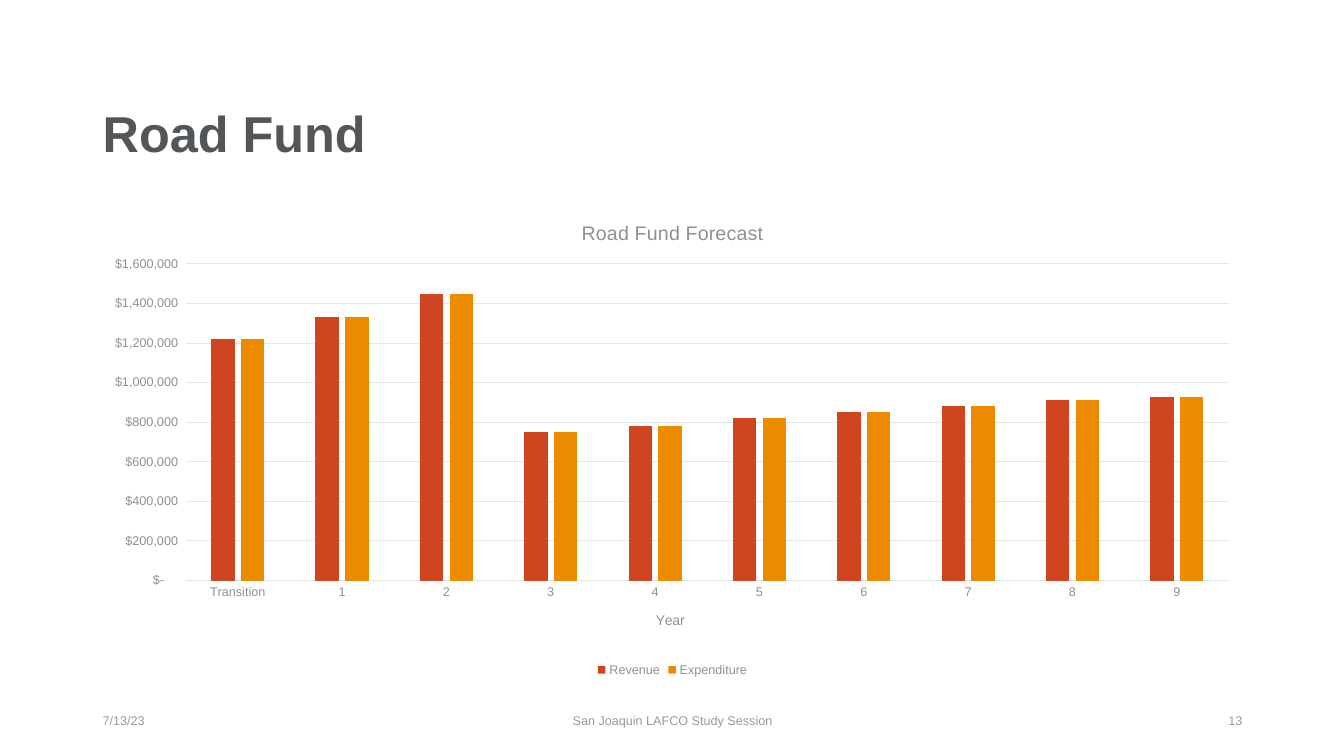
from lxml.etree import SubElement
from pptx import Presentation
from pptx.chart.data import CategoryChartData
from pptx.dml.color import RGBColor
from pptx.enum.chart import XL_CHART_TYPE, XL_LEGEND_POSITION, XL_TICK_MARK
from pptx.enum.text import MSO_ANCHOR, PP_ALIGN
from pptx.oxml.ns import qn
from pptx.util import Inches, Pt

DARK = RGBColor(0x53, 0x56, 0x59)
GRAY = RGBColor(0x8D, 0x91, 0x95)
FOOTER = RGBColor(0x99, 0x9A, 0x9B)
GRID = RGBColor(0xE5, 0xE6, 0xE7)
RED = RGBColor(0xCF, 0x45, 0x20)
ORANGE = RGBColor(0xED, 0x8B, 0x00)
DOLLARS = '_("$"* #,##0_);_("$"* \\(#,##0\\);_("$"* "-"??_);_(@_)'
YEARS = ["Transition"] + [str(year) for year in range(1, 10)]
BALANCED = [thousands * 1000 for thousands in
            (1220, 1330, 1450, 750, 780, 820, 850, 880, 910, 930)]


class SlideBuilder:
    """Holds the text style and the current slide."""

    def __init__(self, slide, font="Arial"):
        self.slide = slide
        self.font = font

    def style(self, font, size, color, bold=False):
        font.name = self.font
        font.size = Pt(size)
        font.bold = bold
        font.color.rgb = color

    def text(self, text, left, top, width, height, size, color,
             align=PP_ALIGN.LEFT, bold=False, spacing=1.0):
        tf = self.slide.shapes.add_textbox(
            Inches(left), Inches(top), Inches(width), Inches(height)).text_frame
        tf.word_wrap = True
        tf.vertical_anchor = MSO_ANCHOR.MIDDLE
        p = tf.paragraphs[0]
        p.text = text
        p.alignment = align
        p.line_spacing = spacing
        self.style(p.runs[0].font, size, color, bold)

    def heading(self, owner, text, size):
        p = owner.text_frame.paragraphs[0]
        p.text = text
        self.style(p.runs[0].font, size, GRAY)

    def axis(self, axis):
        axis.major_tick_mark = axis.minor_tick_mark = XL_TICK_MARK.NONE
        self.style(axis.tick_labels.font, 9, GRAY)

    def line(self, line):
        line.color.rgb = GRID
        line.width = Pt(0.75)

    def plot_area(self, chart, x, y, w, h):
        area = chart.plots[0]._element.getparent()
        for old in area.findall(qn("c:layout")):
            area.remove(old)
        layout = SubElement(area, qn("c:layout"))
        area.insert(0, layout)
        manual = SubElement(layout, qn("c:manualLayout"))
        settings = {"layoutTarget": "inner", "xMode": "edge", "yMode": "edge",
                    "x": x, "y": y, "w": w, "h": h}
        for name, value in settings.items():
            SubElement(manual, qn(f"c:{name}")).set("val", str(value))

    def columns(self, title, axis_title, categories, series, left, top, width, height):
        data = CategoryChartData(number_format=DOLLARS)
        data.categories = categories
        for name, values, _ in series:
            data.add_series(name, values)
        chart = self.slide.shapes.add_chart(
            XL_CHART_TYPE.COLUMN_CLUSTERED, Inches(left), Inches(top),
            Inches(width), Inches(height), data).chart
        self.style(chart.font, 10, DARK)
        chart.has_title = True
        self.heading(chart.chart_title, title, 14)
        chart.chart_title.include_in_layout = False

        chart.has_legend = True
        chart.legend.position = XL_LEGEND_POSITION.BOTTOM
        chart.legend.include_in_layout = False
        self.style(chart.legend.font, 9, GRAY)

        plot = chart.plots[0]
        plot.gap_width = 219
        plot.overlap = -27
        plot.vary_by_categories = False
        for column, (_, _, color) in zip(plot.series, series):
            column.format.fill.solid()
            column.format.fill.fore_color.rgb = color

        years, amounts = chart.category_axis, chart.value_axis
        self.axis(years)
        self.line(years.format.line)
        years.has_title = True
        self.heading(years.axis_title, axis_title, 10)

        self.axis(amounts)
        amounts.minimum_scale = 0
        amounts.maximum_scale = 1600000
        amounts.major_unit = 200000
        amounts.format.line.fill.background()
        amounts.has_major_gridlines = True
        self.line(amounts.major_gridlines.format.line)
        amounts.tick_labels.number_format = DOLLARS
        amounts.tick_labels.number_format_is_linked = False
        self.plot_area(chart, 0.08, 0.13, 0.9, 0.66)


def main():
    prs = Presentation()
    prs.slide_width, prs.slide_height = Inches(13.33), Inches(7.5)
    s = SlideBuilder(prs.slides.add_slide(prs.slide_layouts[6]))
    s.text("Road Fund", 0.92, 0.86, 11.5, 0.99, 36, DARK, bold=True, spacing=0.9)
    s.columns("Road Fund Forecast", "Year", YEARS,
              [("Revenue", BALANCED, RED), ("Expenditure", BALANCED, ORANGE)],
              0.92, 2, 11.5, 4.76)
    for text, left, width, align in (
            ("7/13/23", 0.92, 3, PP_ALIGN.LEFT),
            ("San Joaquin LAFCO Study Session", 4.42, 4.5, PP_ALIGN.CENTER),
            ("13", 9.42, 3, PP_ALIGN.RIGHT)):
        s.text(text, left, 6.95, width, 0.4, 9, FOOTER, align)
    prs.save("out.pptx")


if __name__ == "__main__":
    main()
